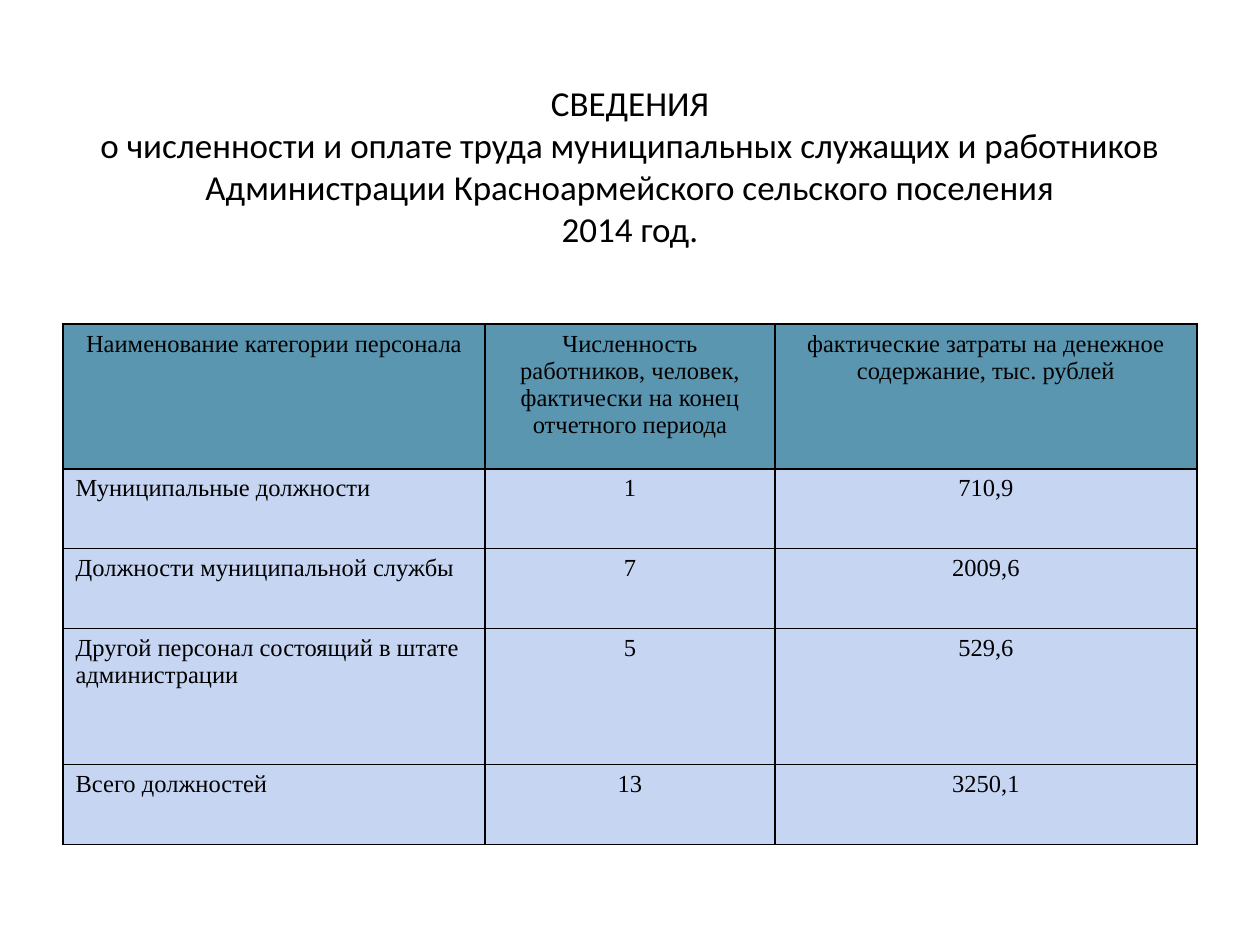
from copy import deepcopy

from lxml.etree import SubElement
from pptx import Presentation
from pptx.dml.color import RGBColor
from pptx.enum.text import MSO_ANCHOR as Anchor, MSO_AUTO_SIZE as AutoSize, PP_ALIGN as Align
from pptx.oxml.ns import qn
from pptx.util import Cm, Pt

# Content
TITLE = (
    "СВЕДЕНИЯ\n"
    "о численности и оплате труда муниципальных служащих и работников "
    "Администрации Красноармейского сельского поселения\n"
    "2014 год."
)
HEADER = (
    ["Наименование категории персонала"],
    ["Численность работников, человек,", "фактически на конец отчетного периода"],
    ["фактические затраты на денежное содержание, тыс. рублей"],
)
STAFF = [
    ("Муниципальные должности", "1", "710,9"),
    ("Должности муниципальной службы", "7", "2009,6"),
    ("Другой персонал состоящий в штате администрации", "5", "529,6"),
    ("Всего должностей", "13", "3250,1"),
]

# Layout in centimetres
SLIDE_SIZE = (25.4, 19.05)
MARGIN = 1.27
TITLE_TOP, TITLE_HEIGHT = 0.76, 5.16
TABLE_TOP = 6.53
COLUMN_WIDTHS = (8.51, 5.84, 8.51)
ROW_HEIGHTS = (2.92, 1.61, 1.61, 2.74, 1.61)

THEME = {
    "text": "000000",
    "border": "000000",
    "header": "5B96B1",
    "body": "C6D5F2",
    "title_font": "Calibri",
    "table_font": "Times New Roman",
    "title_size": 20,
    "table_size": 14,
    "border_width": 1,
}


def write(text_frame, paragraphs, *, font, size, align=Align.CENTER):
    """Fill a text frame; a newline inside a paragraph is a line break."""
    for index, text in enumerate(paragraphs):
        paragraph = text_frame.paragraphs[0] if index == 0 else text_frame.add_paragraph()
        paragraph.text = text
        paragraph.alignment = align
        for run in paragraph.runs:
            run.font.name = font
            run.font.size = Pt(size)
            run.font.color.rgb = RGBColor.from_string(THEME["text"])
        # Line breaks take the run format, so they keep the line height
        properties = paragraph.runs[0]._r.find(qn("a:rPr"))
        for line_break in paragraph._p.findall(qn("a:br")):
            line_break.append(deepcopy(properties))


def set_borders(cell):
    properties = cell._tc.get_or_add_tcPr()
    for position, side in enumerate(("lnL", "lnR", "lnT", "lnB")):
        line = properties.makeelement(qn(f"a:{side}"), {"w": str(Pt(THEME["border_width"]))})
        fill = SubElement(line, qn("a:solidFill"))
        SubElement(fill, qn("a:srgbClr"), val=THEME["border"])
        properties.insert(position, line)


def add_title(slide, width):
    title = slide.shapes.title
    title.left, title.top = Cm(MARGIN), Cm(TITLE_TOP)
    title.width, title.height = Cm(width), Cm(TITLE_HEIGHT)
    frame = title.text_frame
    frame.word_wrap = True
    frame.auto_size = AutoSize.NONE
    frame.vertical_anchor = Anchor.MIDDLE
    write(frame, [TITLE], font=THEME["title_font"], size=THEME["title_size"])


def add_staff_table(slide, width):
    rows = [HEADER] + [[[text] for text in row] for row in STAFF]
    table = slide.shapes.add_table(
        len(rows), len(HEADER), Cm(MARGIN), Cm(TABLE_TOP), Cm(width), Cm(sum(ROW_HEIGHTS))
    ).table
    for column, column_width in zip(table.columns, COLUMN_WIDTHS):
        column.width = Cm(column_width)
    for row, row_height in zip(table.rows, ROW_HEIGHTS):
        row.height = Cm(row_height)

    for row_index, row in enumerate(rows):
        for column_index, paragraphs in enumerate(row):
            cell = table.cell(row_index, column_index)
            cell.fill.solid()
            cell.fill.fore_color.rgb = RGBColor.from_string(
                THEME["body" if row_index else "header"]
            )
            set_borders(cell)
            is_label = row_index > 0 and column_index == 0
            write(cell.text_frame, paragraphs, font=THEME["table_font"],
                  size=THEME["table_size"], align=Align.LEFT if is_label else Align.CENTER)


def main():
    presentation = Presentation()
    presentation.slide_width, presentation.slide_height = map(Cm, SLIDE_SIZE)
    slide = presentation.slides.add_slide(presentation.slide_layouts[5])
    width = SLIDE_SIZE[0] - 2 * MARGIN
    add_title(slide, width)
    add_staff_table(slide, width)
    presentation.save("out.pptx")


if __name__ == "__main__":
    main()
